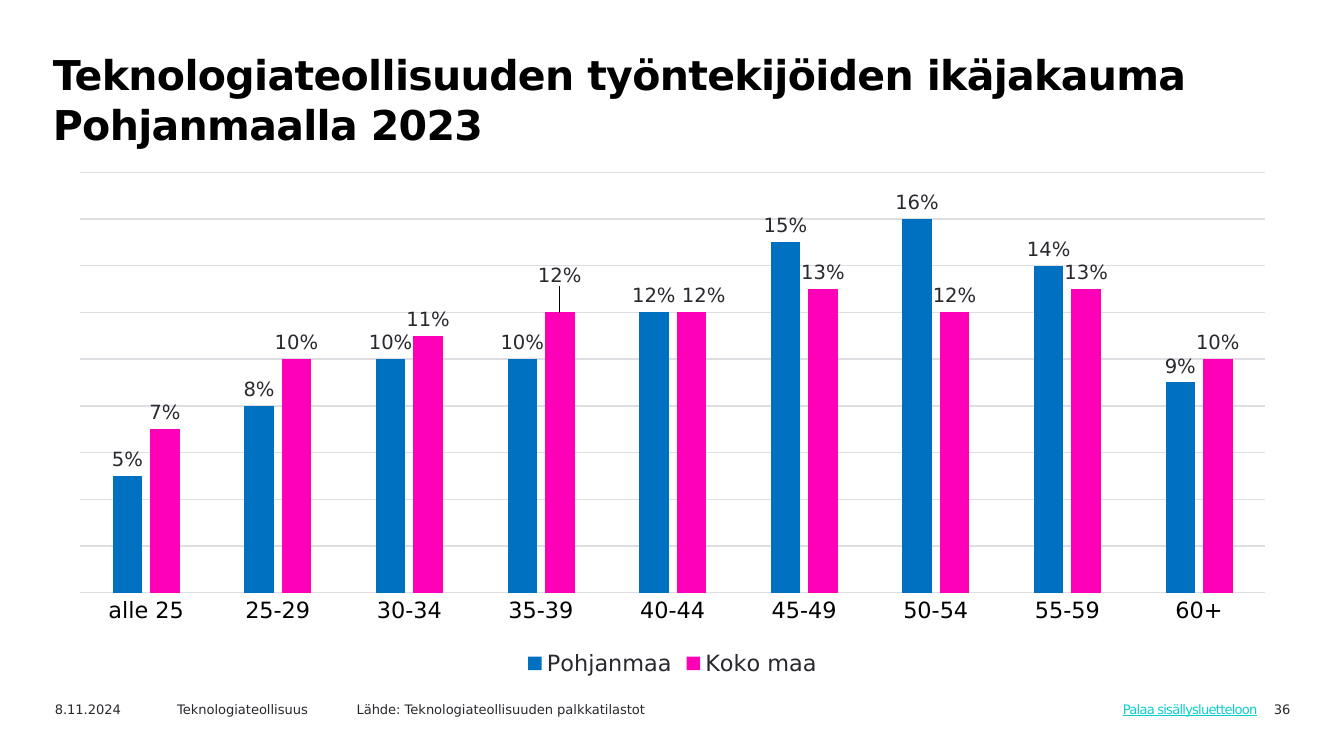
from dataclasses import dataclass

from lxml.etree import fromstring
from pptx import Presentation
from pptx.chart.data import CategoryChartData
from pptx.chart.series import BarSeries
from pptx.dml.color import RGBColor
from pptx.enum.chart import XL_CHART_TYPE as ChartType
from pptx.enum.chart import XL_LABEL_POSITION as LabelPosition
from pptx.enum.chart import XL_LEGEND_POSITION as LegendPosition
from pptx.enum.chart import XL_TICK_LABEL_POSITION as TickLabelPosition
from pptx.enum.chart import XL_TICK_MARK as TickMark
from pptx.enum.text import PP_ALIGN as Align
from pptx.oxml.ns import nsdecls, qn
from pptx.slide import Slide
from pptx.text.text import Font
from pptx.util import Emu, Pt

PX = 4572
FONT_NAME = "DejaVu Sans"
BLACK = RGBColor(0x00, 0x00, 0x00)
INK = RGBColor(0x29, 0x28, 0x2E)
GRID = RGBColor(0xDE, 0xDD, 0xE1)
BLUE = RGBColor(0x00, 0x70, 0xC0)
PINK = RGBColor(0xFF, 0x00, 0xB8)
TURQUOISE = RGBColor(0x0A, 0xCF, 0xCF)
FOOTER_TOP = 1034
HIDDEN_LEADER_LINES = (
    f'<c:extLst {nsdecls("c")}><c:ext uri="{{CE6537A1-D6FC-4f65-9D91-7224C49458BB}}" '
    'xmlns:c15="http://schemas.microsoft.com/office/drawing/2012/chart">'
    '<c15:showLeaderLines val="0"/></c:ext></c:extLst>')


@dataclass(frozen=True)
class TextBlock:
    text: str
    left: int
    top: int
    width: int
    height: int
    size: float = 7
    color: RGBColor = INK
    bold: bool = False
    underline: bool = False
    align: Align = Align.LEFT
    tracking: int = 0
    line_spacing: int = 0
    indent: int = 0
    inset: int = 0


@dataclass(frozen=True)
class AgeSeries:
    name: str
    percentages: tuple[int, ...]
    color: RGBColor


@dataclass(frozen=True)
class LabelShift:
    series: int
    point: int
    x: float
    y: float


AGE_GROUPS = ("alle 25", "25-29", "30-34", "35-39", "40-44",
              "45-49", "50-54", "55-59", "60+")
AGE_SERIES = (
    AgeSeries("Pohjanmaa", (5, 8, 10, 10, 12, 15, 16, 14, 9), BLUE),
    AgeSeries("Koko maa", (7, 10, 11, 12, 12, 13, 12, 13, 10), PINK),
)
LABEL_SHIFTS = (LabelShift(1, 3, 0, -0.04), LabelShift(1, 4, 0.01, 0))

TITLE = TextBlock("Teknologiateollisuuden työntekijöiden ikäjakauma Pohjanmaalla 2023",
                  56, 62, 1864, 212, size=22, color=BLACK, bold=True,
                  tracking=-34, line_spacing=27, indent=3)
FOOTER = (
    TextBlock("36", 1752, FOOTER_TOP, 188, 36, align=Align.RIGHT),
    TextBlock("8.11.2024", 62, FOOTER_TOP, 200, 36),
    TextBlock("Teknologiateollisuus", 244, FOOTER_TOP, 284, 36),
    TextBlock("Lähde: Teknologiateollisuuden palkkatilastot", 511, FOOTER_TOP, 694, 64),
    TextBlock("Palaa sisällysluetteloon", 1663, 1036, 244, 40, color=TURQUOISE,
              underline=True, tracking=-40, inset=8),
)


def px(length: int) -> Emu:
    return Emu(length * PX)


def set_font(font: Font, size: float, color: RGBColor) -> None:
    font.name = FONT_NAME
    font.size = Pt(size)
    font.color.rgb = color


def add_text(slide: Slide, block: TextBlock) -> None:
    shape = slide.shapes.add_textbox(px(block.left), px(block.top),
                                     px(block.width), px(block.height))
    frame = shape.text_frame
    frame.word_wrap = True
    if block.inset:
        frame.margin_left = frame.margin_right = px(block.inset)
        frame.margin_top = frame.margin_bottom = px(block.inset)
    paragraph = frame.paragraphs[0]
    paragraph.text = block.text
    paragraph.alignment = block.align
    if block.line_spacing:
        paragraph.line_spacing = Pt(block.line_spacing)
    set_font(paragraph.font, block.size, block.color)
    paragraph.font.bold = block.bold
    paragraph.font.underline = block.underline
    properties = paragraph._p.get_or_add_pPr()
    if block.indent:
        properties.set("marL", str(px(block.indent)))
    if block.tracking:
        properties.find(qn("a:defRPr")).set("spc", str(block.tracking))


def style_series(series: BarSeries, color: RGBColor) -> None:
    series.format.fill.solid()
    series.format.fill.fore_color.rgb = color
    series.invert_if_negative = False
    labels = series.data_labels
    labels.show_value = True
    labels.number_format = "0%"
    labels.number_format_is_linked = False
    labels.position = LabelPosition.OUTSIDE_END
    set_font(labels.font, 10.5, INK)


def add_age_chart(slide: Slide) -> None:
    data = CategoryChartData(number_format="0%")
    data.categories = AGE_GROUPS
    for age_series in AGE_SERIES:
        data.add_series(age_series.name, [value / 100 for value in age_series.percentages])
    chart = slide.shapes.add_chart(ChartType.COLUMN_CLUSTERED, px(83), px(241),
                                   px(1836), px(774), data).chart
    set_font(chart.font, 10, INK)
    chart.has_title = False
    chart.has_legend = True
    chart.legend.position = LegendPosition.BOTTOM
    chart.legend.include_in_layout = False
    set_font(chart.legend.font, 12, INK)

    category_axis = chart.category_axis
    category_axis.major_tick_mark = TickMark.NONE
    category_axis.format.line.color.rgb = GRID
    category_axis.format.line.width = Pt(0.75)
    set_font(category_axis.tick_labels.font, 12, BLACK)

    value_axis = chart.value_axis
    value_axis.minimum_scale = 0
    value_axis.maximum_scale = 0.18
    value_axis.major_unit = 0.02
    value_axis.tick_label_position = TickLabelPosition.NONE
    value_axis.visible = False
    value_axis.major_gridlines.format.line.color.rgb = GRID
    value_axis.major_gridlines.format.line.width = Pt(0.75)

    plot = chart.plots[0]
    plot.gap_width = 219
    plot.overlap = -27
    plot.vary_by_categories = False
    for series, age_series in zip(plot.series, AGE_SERIES):
        style_series(series, age_series.color)

    for shift in LABEL_SHIFTS:
        label = plot.series[shift.series].points[shift.point].data_label
        set_font(label.font, 10.5, INK)
        label.position = LabelPosition.OUTSIDE_END
        index = chart.element.xpath(
            f".//c:ser[c:idx/@val='{shift.series}']//c:dLbl/c:idx[@val='{shift.point}']")[0]
        index.addnext(fromstring(
            f'<c:layout {nsdecls("c")}><c:manualLayout>'
            f'<c:x val="{shift.x}"/><c:y val="{shift.y}"/>'
            '</c:manualLayout></c:layout>'))
    for labels in chart.element.xpath(".//c:ser/c:dLbls"):
        labels.append(fromstring(HIDDEN_LEADER_LINES))


def main() -> None:
    presentation = Presentation()
    presentation.slide_width = px(2000)
    presentation.slide_height = px(1125)
    slide = presentation.slides.add_slide(presentation.slide_layouts[6])
    add_text(slide, TITLE)
    add_age_chart(slide)
    for block in FOOTER:
        add_text(slide, block)
    presentation.save("out.pptx")


if __name__ == "__main__":
    main()
